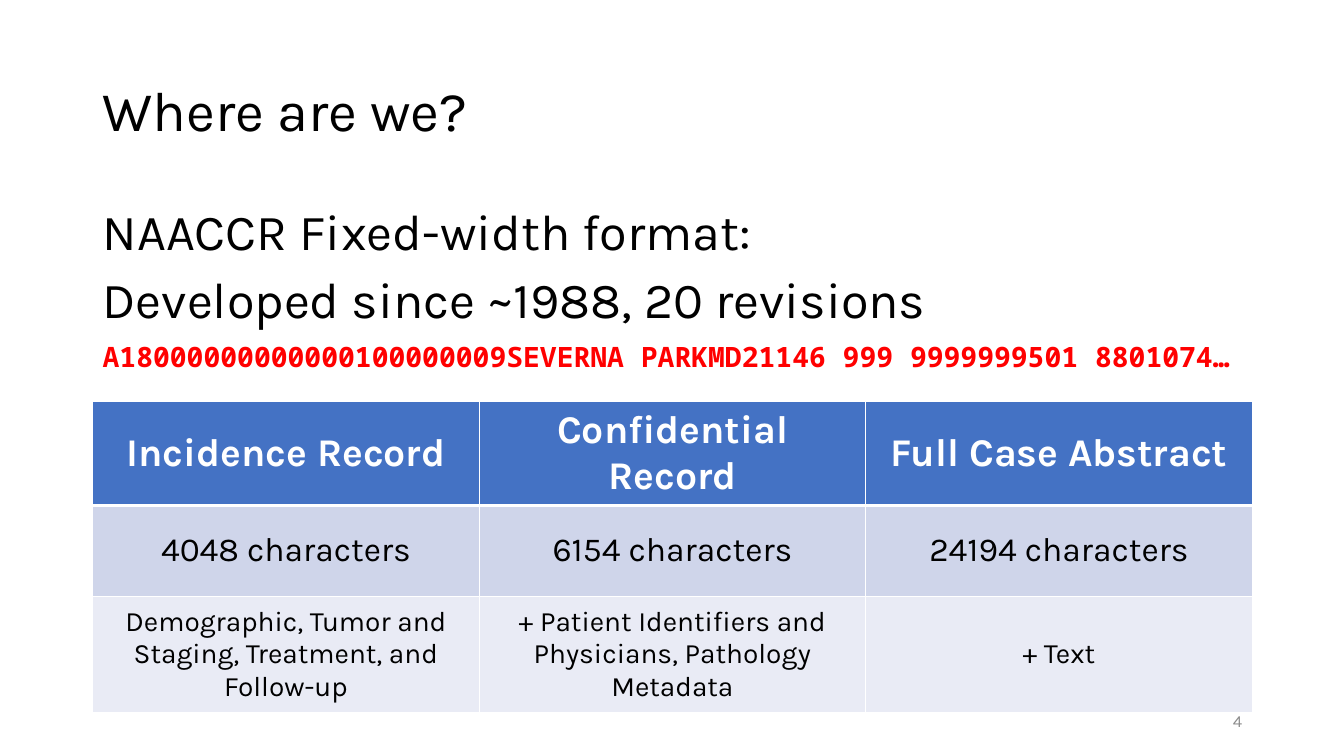
from dataclasses import dataclass

from lxml import etree
from pptx import Presentation
from pptx.dml.color import RGBColor
from pptx.enum.text import MSO_ANCHOR, PP_ALIGN
from pptx.oxml.ns import qn
from pptx.util import Inches, Pt

LEFT, CENTER, RIGHT = PP_ALIGN.LEFT, PP_ALIGN.CENTER, PP_ALIGN.RIGHT
TOP, MIDDLE = MSO_ANCHOR.TOP, MSO_ANCHOR.MIDDLE
SANS, MONO = "Karla", "Noto Sans Mono"
BLACK, WHITE = "000000", "FFFFFF"
EDGE, WIDE = 0.92, 11.5


@dataclass
class Style:
    size: float
    color: str = BLACK
    bold: bool = False
    face: str = SANS
    align: PP_ALIGN = LEFT


@dataclass
class Line:
    text: str
    style: Style
    ratio: float = 1.0
    before: float = 0


@dataclass
class Box:
    left: float
    top: float
    width: float
    height: float
    anchor: MSO_ANCHOR
    lines: list[Line]


@dataclass
class Band:
    height: float
    fill: str
    style: Style
    texts: list[str]


LARGE = Style(36)
BOXES = [
    Box(EDGE, 0.4, WIDE, 1.45, MIDDLE, [Line("Where are we?", Style(40), 0.9)]),
    Box(EDGE, 2, WIDE, 1.85, TOP, [
        Line("NAACCR Fixed-width format:", LARGE, 0.9, 10),
        Line("Developed since ~1988, 20 revisions", LARGE, 0.9, 10),
        Line("A18000000000000100000009SEVERNA PARKMD21146 999 9999999501 8801074…",
             Style(20, "FF0000", True, MONO), 0.9, 10),
    ]),
    Box(9.42, 6.95, 3, 0.4, MIDDLE, [Line("4", Style(12, "8C8C8C", align=RIGHT))]),
]
BANDS = [
    Band(0.9, "4472C4", Style(28, WHITE, True, align=CENTER),
         ["Incidence Record", "Confidential Record", "Full Case Abstract"]),
    Band(0.9, "CFD5EA", Style(24, align=CENTER),
         ["4048 characters", "6154 characters", "24194 characters"]),
    Band(1.16, "E9EBF5", Style(20, align=CENTER),
         ["Demographic, Tumor and Staging, Treatment, and Follow-up",
          "+ Patient Identifiers and Physicians, Pathology Metadata",
          "+ Text"]),
]


def paint(code: str) -> RGBColor:
    return RGBColor.from_string(code)


def write(para, text: str, style: Style) -> None:
    para.text = text
    para.alignment = style.align
    font = para.font
    font.name, font.size, font.bold = style.face, Pt(style.size), style.bold
    font.color.rgb = paint(style.color)


def draw_box(slide, box: Box) -> None:
    shape = slide.shapes.add_textbox(
        Inches(box.left), Inches(box.top), Inches(box.width), Inches(box.height))
    frame = shape.text_frame
    frame.word_wrap = True
    frame.vertical_anchor = box.anchor
    for i, line in enumerate(box.lines):
        para = frame.add_paragraph() if i else frame.paragraphs[0]
        write(para, line.text, line.style)
        para.line_spacing = line.ratio
        para.space_before = Pt(line.before)


def rule(cell, side: str, points: float) -> None:
    props = cell._tc.get_or_add_tcPr()
    edge = etree.SubElement(props, qn(f"a:ln{side}"), w=str(Pt(points)))
    fill = etree.SubElement(edge, qn("a:solidFill"))
    etree.SubElement(fill, qn("a:srgbClr"), val=WHITE)


def draw_table(slide, bands: list[Band], top: float) -> None:
    count = len(bands[0].texts)
    height = sum(band.height for band in bands)
    table = slide.shapes.add_table(
        len(bands), count, Inches(EDGE), Inches(top), Inches(WIDE), Inches(height)).table
    for col in table.columns:
        col.width = Inches(WIDE / count)
    for r, band in enumerate(bands):
        table.rows[r].height = Inches(band.height)
        edges = {"L": 1, "R": 1, "T": 3 if r == 1 else 1, "B": 3 if r == 0 else 1}
        for c, text in enumerate(band.texts):
            cell = table.cell(r, c)
            cell.vertical_anchor = MIDDLE
            for side, points in edges.items():
                rule(cell, side, points)
            cell.fill.solid()
            cell.fill.fore_color.rgb = paint(band.fill)
            write(cell.text_frame.paragraphs[0], text, band.style)


def main() -> None:
    deck = Presentation()
    deck.slide_width, deck.slide_height = Inches(13.33), Inches(7.5)
    slide = deck.slides.add_slide(deck.slide_layouts[6])
    for box in BOXES:
        draw_box(slide, box)
    draw_table(slide, BANDS, 3.98)
    deck.save("out.pptx")


if __name__ == "__main__":
    main()
